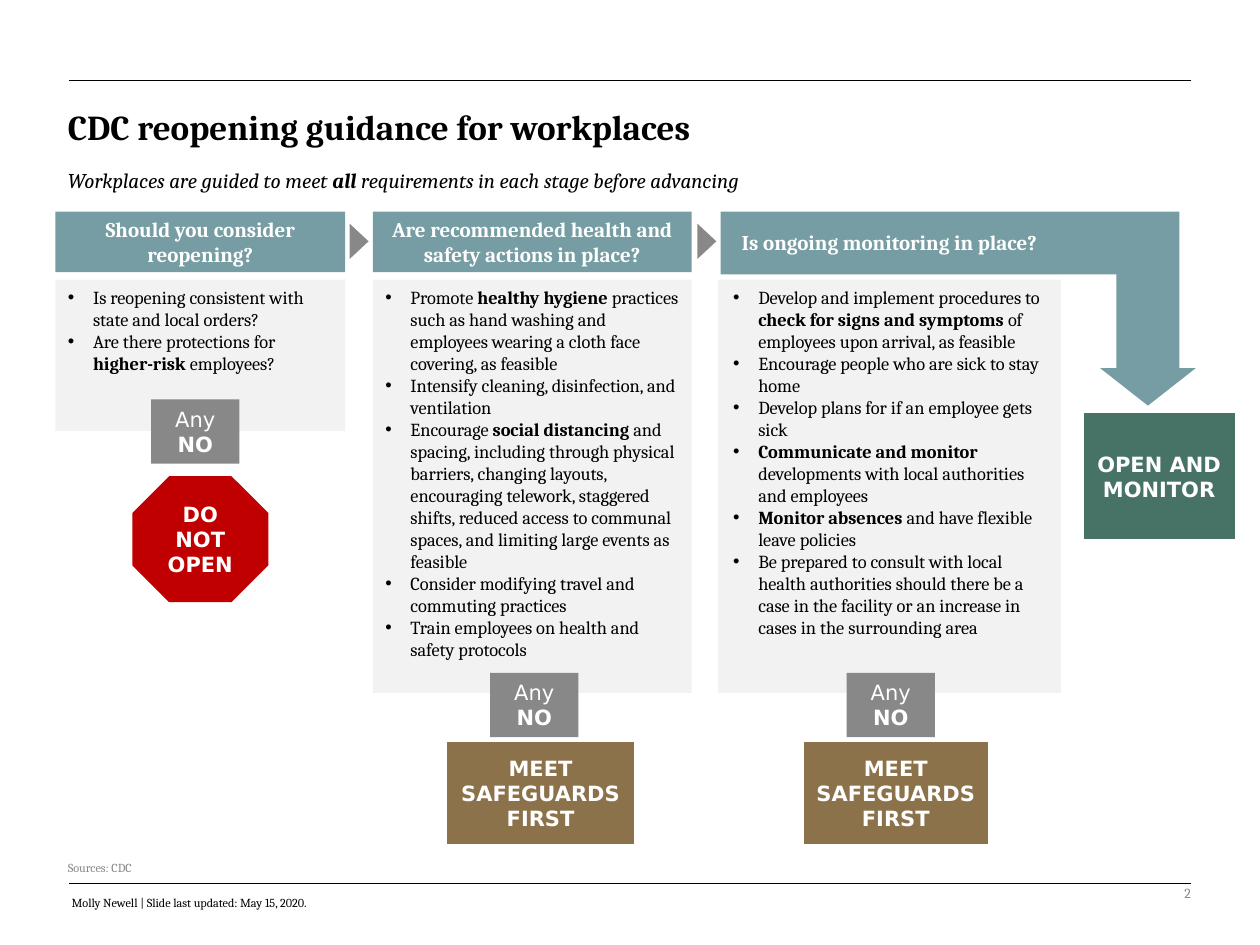
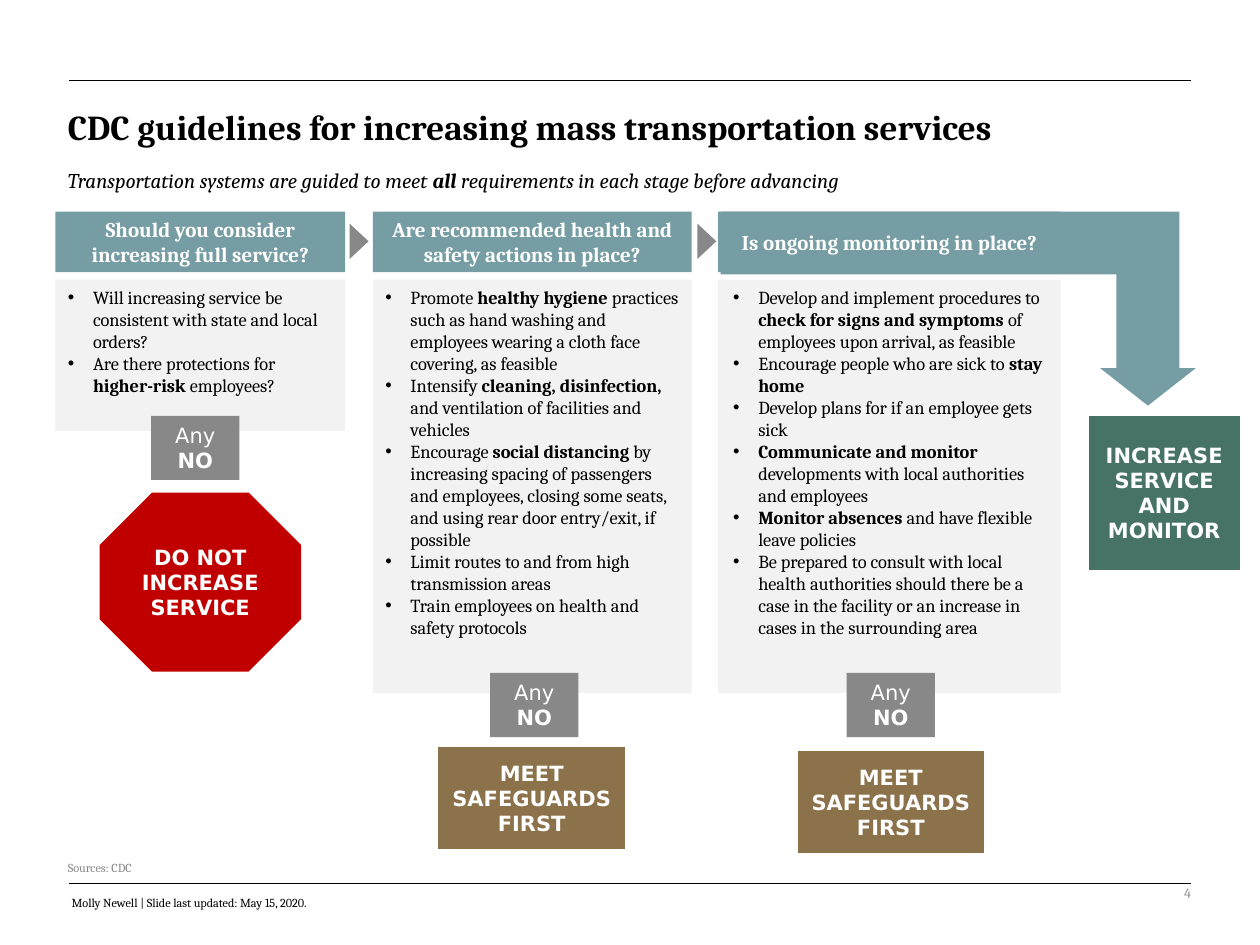
from dataclasses import dataclass

from lxml.etree import SubElement
from pptx import Presentation
from pptx.dml.color import RGBColor
from pptx.enum.shapes import MSO_CONNECTOR, MSO_SHAPE as Shape
from pptx.enum.text import MSO_ANCHOR as Anchor, PP_ALIGN as Align
from pptx.oxml.ns import qn
from pptx.util import Inches, Pt

SERIF, SANS = "Cambria", "DejaVu Sans"
BLACK, WHITE, GREY, PAGE_GREY = "000000", "FFFFFF", "888888", "8C8C8C"
TEAL, PANEL, RED, BROWN, GREEN = "769DA3", "F2F2F2", "C00000", "8B724A", "477367"

HEADER_TOP, HEADER_HEIGHT = 1.68, 0.48
PANEL_TOP = 2.22
COLUMNS = [(0.44, 2.3, 1.2), (2.96, 2.53, 3.28), (5.7, 2.72, 3.28)]  # left, width, panel height
TEXT_AREAS = [(0.44, 2.2), (2.96, 2.53), (5.72, 2.71)]  # left, width
ANY_NO_LEFTS = [1.2, 3.89, 6.72]
ANY_NO_TOP = 5.34

# Words between ** marks are bold.
HYGIENE = ("Promote **healthy hygiene **practices such as hand washing and employees "
           "wearing a cloth face covering, as feasible")
TRAINING = "Train employees on health and safety protocols"
PROTECTIONS = "Are there protections for **higher-risk** employees?"


def monitoring_actions(sick_rule):
    return [
        "Develop and implement procedures to **check for signs and symptoms **of "
        "employees upon arrival, as feasible",
        sick_rule,
        "Develop plans for if an employee gets sick",
        "**Communicate and monitor **developments with local authorities and employees",
        "**Monitor absences **and have flexible leave policies",
        "Be prepared to consult with local health authorities should there be a case in "
        "the facility or an increase in cases in the surrounding area",
    ]


@dataclass
class Guidance:
    """Content of one slide; boxes are (left, top, width, height) in inches."""
    page: int
    title: str
    subtitle: str
    first_question: str
    bullets: list
    first_any_no_top: float
    stop_text: str
    stop_box: tuple
    safeguard_boxes: list
    goal_text: str
    goal_box: tuple
    last_header_fill: str | None = None


GUIDANCE = [
    Guidance(
        page=2,
        title="CDC reopening guidance for workplaces",
        subtitle="Workplaces are guided to meet **all **requirements in each stage before advancing",
        first_question="Should you consider reopening?",
        bullets=[
            ["Is reopening consistent with state and local orders?", PROTECTIONS],
            [HYGIENE,
             "Intensify cleaning, disinfection, and ventilation",
             "Encourage **social distancing **and spacing, including through physical "
             "barriers, changing layouts, encouraging telework, staggered shifts, reduced "
             "access to communal spaces, and limiting large events as feasible",
             "Consider modifying travel and commuting practices",
             TRAINING],
            monitoring_actions("Encourage people who are sick to stay home"),
        ],
        first_any_no_top=3.17,
        stop_text="DO NOT OPEN",
        stop_box=(1.05, 3.78, 1.08, 1),
        safeguard_boxes=[(3.55, 5.89, 1.48, 0.81), (6.38, 5.89, 1.46, 0.81)],
        goal_text="OPEN AND MONITOR",
        goal_box=(8.6, 3.28, 1.2, 1),
    ),
    Guidance(
        page=4,
        title="CDC guidelines for increasing mass transportation services",
        subtitle="Transportation systems are guided to meet **all **requirements in each "
                 "stage before advancing",
        first_question="Should you consider increasing full service?",
        bullets=[
            ["Will increasing service be consistent with state and local orders?", PROTECTIONS],
            [HYGIENE,
             "Intensify **cleaning, disinfection, **and ventilation of facilities and vehicles",
             "Encourage **social distancing **by increasing spacing of passengers and "
             "employees, closing some seats, and using rear door entry/exit, if possible",
             "Limit routes to and from high transmission areas",
             TRAINING],
            monitoring_actions("Encourage people who are sick to **stay home**"),
        ],
        first_any_no_top=3.3,
        stop_text="DO NOT INCREASE SERVICE",
        stop_box=(0.79, 3.91, 1.6, 1.42),
        safeguard_boxes=[(3.48, 5.93, 1.48, 0.81), (6.33, 5.96, 1.48, 0.81)],
        goal_text="INCREASE SERVICE AND MONITOR",
        goal_box=(8.64, 3.3, 1.2, 1.22),
        last_header_fill=TEAL,
    ),
]


def color(hex_text):
    return RGBColor.from_string(hex_text)


def add_bullet(paragraph):
    properties = paragraph._p.get_or_add_pPr()
    properties.set("marL", str(Inches(0.2)))
    properties.set("indent", str(Inches(-0.2)))
    SubElement(properties, qn("a:buFont"), typeface="Arial")
    SubElement(properties, qn("a:buChar"), char="•")


def write_text(shape, *texts, size=12, font=SERIF, fill=BLACK, bold=False, italic=False,
               align=Align.LEFT, anchor=Anchor.TOP, line_spacing=None, bullets=False):
    """Write one paragraph per text; ** switches bold on and off."""
    frame = shape.text_frame
    frame.word_wrap = True
    frame.vertical_anchor = anchor
    for index, text in enumerate(texts):
        paragraph = frame.add_paragraph() if index else frame.paragraphs[0]
        paragraph.alignment = align
        if line_spacing:
            paragraph.line_spacing = line_spacing
        if bullets:
            add_bullet(paragraph)
        for part, words in enumerate(text.split("**")):
            if words:
                run = paragraph.add_run()
                run.text = words
                run.font.name, run.font.size = font, Pt(size)
                run.font.bold, run.font.italic = bold or part % 2 == 1, italic
                run.font.color.rgb = color(fill)


def add_text(slide, box, *texts, **style):
    write_text(slide.shapes.add_textbox(*map(Inches, box)), *texts, **style)


def add_block(slide, kind, box, fill, text=None, **style):
    shape = slide.shapes.add_shape(kind, *map(Inches, box))
    shape.shadow.inherit = False
    shape.line.fill.background()
    if fill:
        shape.fill.solid()
        shape.fill.fore_color.rgb = color(fill)
    else:
        shape.fill.background()
    if text:
        write_text(shape, text, fill=WHITE, align=Align.CENTER, anchor=Anchor.MIDDLE, **style)
    return shape


def add_rule(slide, top):
    rule = slide.shapes.add_connector(
        MSO_CONNECTOR.STRAIGHT, Inches(0.55), Inches(top), Inches(9.45), Inches(top))
    rule.line.color.rgb = color(BLACK)
    rule.line.width = Pt(0.5)
    SubElement(rule._element.spPr, qn("a:effectLst"))


def add_frame(slide, guidance):
    """Add the rules, titles and footers."""
    for top in (0.64, 7.01):
        add_rule(slide, top)
    add_text(slide, (0.44, 0.83, 9.2, 0.7), guidance.title, size=20, bold=True, line_spacing=0.9)
    add_text(slide, (0.44, 1.28, 8.43, 0.3), guidance.subtitle, italic=True)
    add_text(slide, (0.44, 6.78, 3.2, 0.22), "Sources: CDC", size=7, fill=GREY)
    add_text(slide, (0.47, 7.06, 2.85, 0.22),
             "Molly Newell | Slide last updated: May 15, 2020.", size=7)
    add_text(slide, (7.06, 6.89, 2.49, 0.4), str(guidance.page), size=8, fill=PAGE_GREY,
             align=Align.RIGHT, anchor=Anchor.MIDDLE)


def add_goal_arrow(slide):
    arrow = add_block(slide, Shape.BENT_UP_ARROW, (5.72, HEADER_TOP, 3.77, 1.54), TEAL)
    for index, value in enumerate((0.324, 0.246, 0.193)):
        arrow.adjustments[index] = value
    arrow._element.spPr.find(qn("a:xfrm")).set("flipV", "1")


def add_stages(slide, guidance):
    """Add the three columns of header, panel and bullets, with the arrows between them."""
    add_goal_arrow(slide)
    questions = [guidance.first_question,
                 "Are recommended health and safety actions in place?",
                 "Is ongoing monitoring in place?"]
    header_fills = [TEAL, TEAL, guidance.last_header_fill]
    for (left, width, height), (text_left, text_width), question, fill, bullets in zip(
            COLUMNS, TEXT_AREAS, questions, header_fills, guidance.bullets):
        add_block(slide, Shape.RECTANGLE, (left, HEADER_TOP, width, HEADER_HEIGHT), fill,
                  question, bold=True)
        add_block(slide, Shape.RECTANGLE, (left, PANEL_TOP, width, height), PANEL)
        add_text(slide, (text_left, PANEL_TOP, text_width, height), *bullets,
                 size=10.5, bullets=True)
    for left in (2.71, 5.47):
        add_block(slide, Shape.ISOSCELES_TRIANGLE, (left, 1.84, 0.28, 0.15), GREY).rotation = 90


def add_outcomes(slide, guidance):
    any_no_tops = [guidance.first_any_no_top, ANY_NO_TOP, ANY_NO_TOP]
    for left, top in zip(ANY_NO_LEFTS, any_no_tops):
        add_block(slide, Shape.RECTANGLE, (left, top, 0.7, 0.51), GREY, "Any **NO**", font=SANS)
    outcomes = [(Shape.OCTAGON, guidance.stop_box, RED, guidance.stop_text),
                (Shape.FLOWCHART_PROCESS, guidance.goal_box, GREEN, guidance.goal_text)]
    outcomes += [(Shape.FLOWCHART_PROCESS, box, BROWN, "MEET SAFEGUARDS FIRST")
                 for box in guidance.safeguard_boxes]
    for kind, box, fill, text in outcomes:
        add_block(slide, kind, box, fill, text, font=SANS, bold=True)


def main():
    presentation = Presentation()
    presentation.slide_width, presentation.slide_height = Inches(10), Inches(7.5)
    for guidance in GUIDANCE:
        slide = presentation.slides.add_slide(presentation.slide_layouts[6])
        add_frame(slide, guidance)
        add_stages(slide, guidance)
        add_outcomes(slide, guidance)
    presentation.save("out.pptx")


if __name__ == "__main__":
    main()
